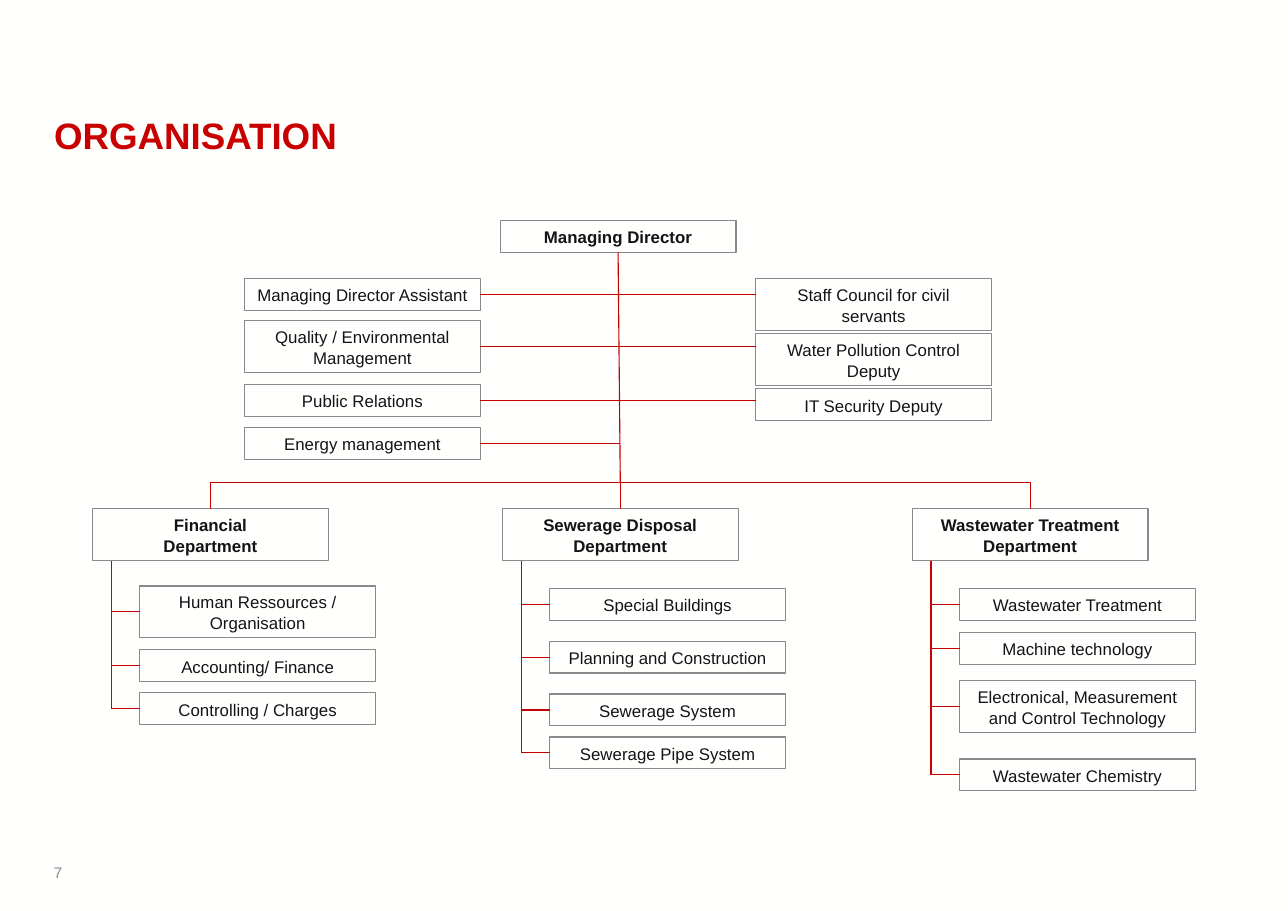
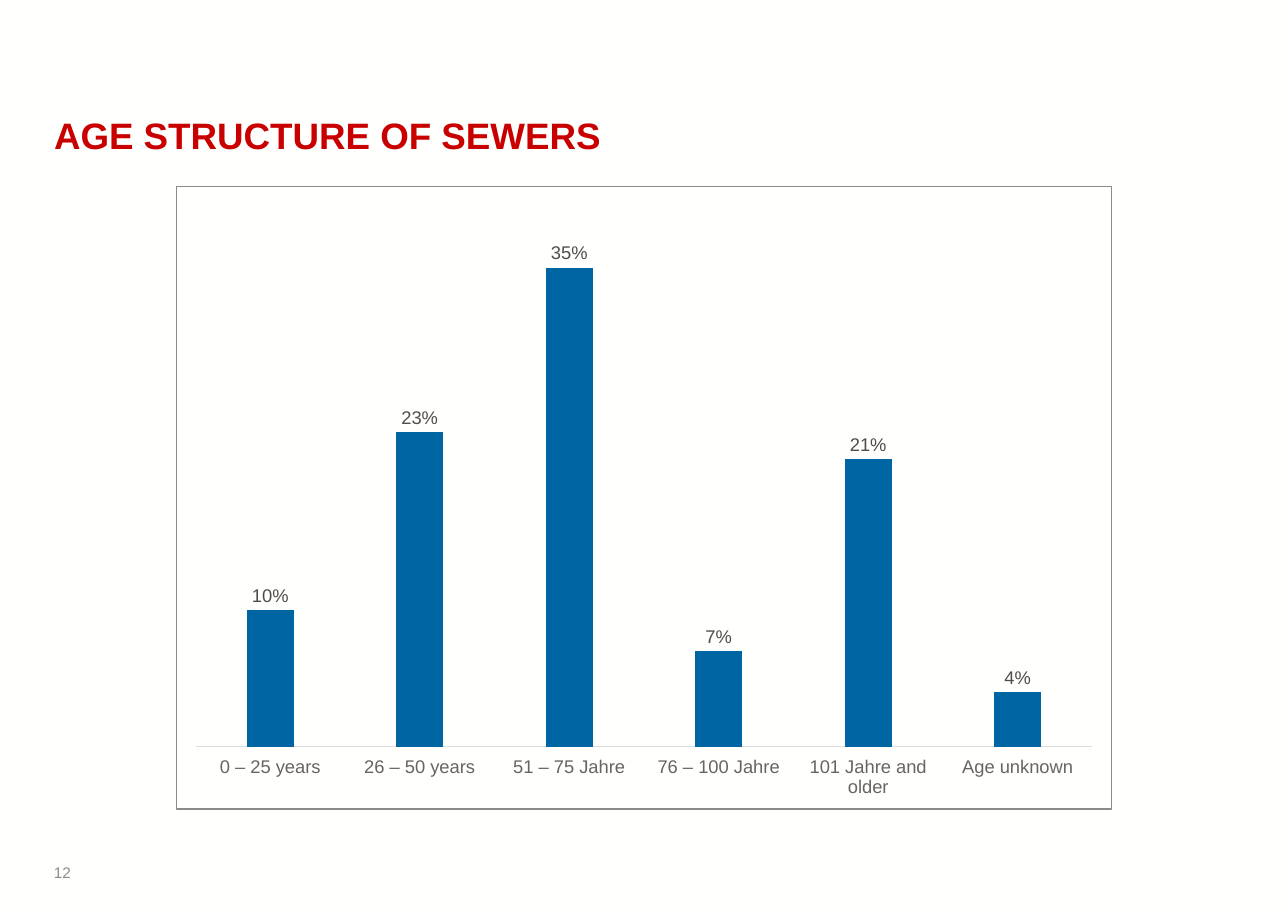
from lxml import etree
from pptx import Presentation
from pptx.chart.data import CategoryChartData
from pptx.dml.color import RGBColor
from pptx.enum.chart import XL_CHART_TYPE, XL_LABEL_POSITION, XL_TICK_LABEL_POSITION, XL_TICK_MARK
from pptx.enum.shapes import MSO_CONNECTOR, MSO_SHAPE
from pptx.enum.text import MSO_ANCHOR, MSO_AUTO_SIZE, PP_ALIGN
from pptx.oxml import parse_xml
from pptx.oxml.ns import nsdecls, qn
from pptx.util import Inches, Pt

HUES = {
    "paper": "FFFFFE", "title": "C90000", "page": "8C8C8C", "text": "141414",
    "frame": "8A8A8A", "link": "C50000", "bar": "0065A3", "axis": "DDDBDB",
    "cats": "696363", "label": "504C4C",
}
INK = {name: RGBColor.from_string(code) for name, code in HUES.items()}

FLUSH = {"margin_left": 0, "margin_top": 0, "margin_right": 0, "margin_bottom": 0,
         "vertical_anchor": MSO_ANCHOR.TOP}
INSET = {"margin_left": Inches(0.1), "margin_top": Inches(0.05),
         "margin_right": Inches(0.1), "margin_bottom": Inches(0.05),
         "vertical_anchor": MSO_ANCHOR.MIDDLE}


def style(font, size, hue, bold=False):
    for key, val in {"name": "Arial", "size": Pt(size), "bold": bold}.items():
        setattr(font, key, val)
    font.color.rgb = INK[hue]


def write(shape, text, look, align, *face):
    """Fill a shape with one paragraph, laid out by the frame values in look."""
    frame = shape.text_frame
    frame.text = text
    frame.word_wrap = True
    frame.auto_size = MSO_AUTO_SIZE.NONE
    for key, val in look.items():
        setattr(frame, key, val)
    para = frame.paragraphs[0]
    para.alignment = align
    style(para.font, *face)


deck = Presentation()
deck.slide_width, deck.slide_height = Inches(11.69), Inches(8.27)
back = deck.slide_master.background.fill
back.solid()
back.fore_color.rgb = INK["paper"]

# Title and page number
slides = []
for head, page in [("ORGANISATION", "7"), ("AGE STRUCTURE OF SEWERS", "12")]:
    slide = deck.slides.add_slide(deck.slide_layouts[5])
    title = slide.shapes.title
    title.left, title.top = Inches(0.49), Inches(1.02)
    title.width, title.height = Inches(10.71), Inches(0.98)
    write(title, head, FLUSH, PP_ALIGN.LEFT, 24, "title", True)
    foot = slide.shapes.add_textbox(Inches(0.49), Inches(7.84), Inches(1.26), Inches(0.16))
    write(foot, page, FLUSH, PP_ALIGN.LEFT, 10, "page")
    slides.append(slide)
org, ages = slides

# Organisation chart: sizes, then boxes as (text, left, top, height, bold)
WIDE, LOW, TALL = 2.14, 0.29, 0.47
LEFT, RIGHT, MID, BUS = 2.22, 6.86, 5.63, 4.38
FIRST, STEP, DEPT = 0.84, 3.72, 4.62

staff = [
    ("Managing Director Assistant", 2.53, LOW),
    ("Quality / Environmental Management", 2.91, TALL),
    ("Public Relations", 3.49, LOW),
    ("Energy management", 3.88, LOW),
]
council = [
    ("Staff Council for civil servants", 2.53, TALL),
    ("Water Pollution Control Deputy", 3.03, TALL),
    ("IT Security Deputy", 3.53, LOW),
]
depts = [
    ("Financial\vDepartment", [
        ("Human Ressources / Organisation", 5.32, TALL),
        ("Accounting/ Finance", 5.9, LOW),
        ("Controlling / Charges", 6.29, LOW),
    ]),
    ("Sewerage Disposal Department", [
        ("Special Buildings", 5.34, LOW),
        ("Planning and Construction", 5.82, LOW),
        ("Sewerage System", 6.3, LOW),
        ("Sewerage Pipe System", 6.69, LOW),
    ]),
    ("Wastewater Treatment Department", [
        ("Wastewater Treatment", 5.34, LOW),
        ("Machine technology", 5.74, LOW),
        ("Electronical, Measurement and Control Technology", 6.18, TALL),
        ("Wastewater Chemistry", 6.89, LOW),
    ]),
]

boxes = [("Managing Director", 4.54, 2, LOW, True)]
boxes += [(text, LEFT, top, high, False) for text, top, high in staff]
boxes += [(text, RIGHT, top, high, False) for text, top, high in council]

# Links as (from x, from y, to x, to y)
links = [(5.61, 2 + LOW, MID, BUS), (FIRST + WIDE / 2, BUS, FIRST + 2 * STEP + WIDE / 2, BUS)]
for row, (text, top, high) in enumerate(staff):
    level = top + high / 2
    end = RIGHT if row < len(council) else MID
    links.append((LEFT + WIDE, level, end, level))

for col, (name, units) in enumerate(depts):
    left = FIRST + col * STEP
    trunk, inner = left + 0.17, left + 0.43
    boxes.append((name, left, DEPT, TALL, True))
    links.append((left + WIDE / 2, BUS, left + WIDE / 2, DEPT))
    for text, top, high in units:
        boxes.append((text, inner, top, high, False))
        level = top + high / 2
        links.append((trunk, level, inner, level))
    links.append((trunk, DEPT + TALL, trunk, level))

for text, left, top, high, bold in boxes:
    box = org.shapes.add_shape(MSO_SHAPE.RECTANGLE, Inches(left), Inches(top),
                               Inches(WIDE), Inches(high))
    box.shadow.inherit = False
    box.fill.background()
    box.line.color.rgb = INK["frame"]
    box.line.width = Pt(0.75)
    write(box, text, INSET, PP_ALIGN.CENTER, 11, "text", bold)
    box.text_frame.paragraphs[0].line_spacing = 1.05

for ends in links:
    link = org.shapes.add_connector(MSO_CONNECTOR.STRAIGHT, *[Inches(val) for val in ends])
    link.line.color.rgb = INK["link"]
    link.line.width = Pt(0.75)
    etree.SubElement(link._element.spPr, qn("a:effectLst"))

# Age chart
data = CategoryChartData(number_format='0"%"')
data.categories = ["0 – 25 years", "26 – 50 years", "51 – 75 Jahre",
                   "76 – 100 Jahre", "101 Jahre and older", "Age unknown"]
data.add_series("Series 1", [10, 23, 35, 7, 21, 4])
chart = ages.shapes.add_chart(XL_CHART_TYPE.COLUMN_CLUSTERED, Inches(1.6), Inches(1.69),
                              Inches(8.49), Inches(5.66), data).chart
chart.has_legend = chart.has_title = False
style(chart.font, 10, "text")

plot = chart.plots[0]
for key, val in {"gap_width": 219, "overlap": -27, "vary_by_categories": False,
                 "has_data_labels": True}.items():
    setattr(plot, key, val)
bars = plot.series[0].format.fill
bars.solid()
bars.fore_color.rgb = INK["bar"]

tags = plot.data_labels
for key, val in {"show_value": True, "position": XL_LABEL_POSITION.OUTSIDE_END,
                 "number_format": '0"%"', "number_format_is_linked": False}.items():
    setattr(tags, key, val)
style(tags.font, 12, "label")

axis = chart.category_axis
for key, val in {"major_tick_mark": XL_TICK_MARK.NONE, "minor_tick_mark": XL_TICK_MARK.NONE,
                 "tick_label_position": XL_TICK_LABEL_POSITION.LOW}.items():
    setattr(axis, key, val)
style(axis.tick_labels.font, 12, "cats")
axis.format.line.color.rgb = INK["axis"]
axis.format.line.width = Pt(0.75)

scale = chart.value_axis
for key, val in {"visible": False, "has_major_gridlines": False,
                 "minimum_scale": 0, "maximum_scale": 40}.items():
    setattr(scale, key, val)

edge = parse_xml(
    f'<c:spPr {nsdecls("c", "a")}><a:noFill/><a:ln w="{Pt(0.75)}"><a:solidFill>'
    f'<a:srgbClr val="{HUES["frame"]}"/></a:solidFill></a:ln></c:spPr>')
chart.element.find(qn("c:chart")).addnext(edge)

deck.save("out.pptx")
